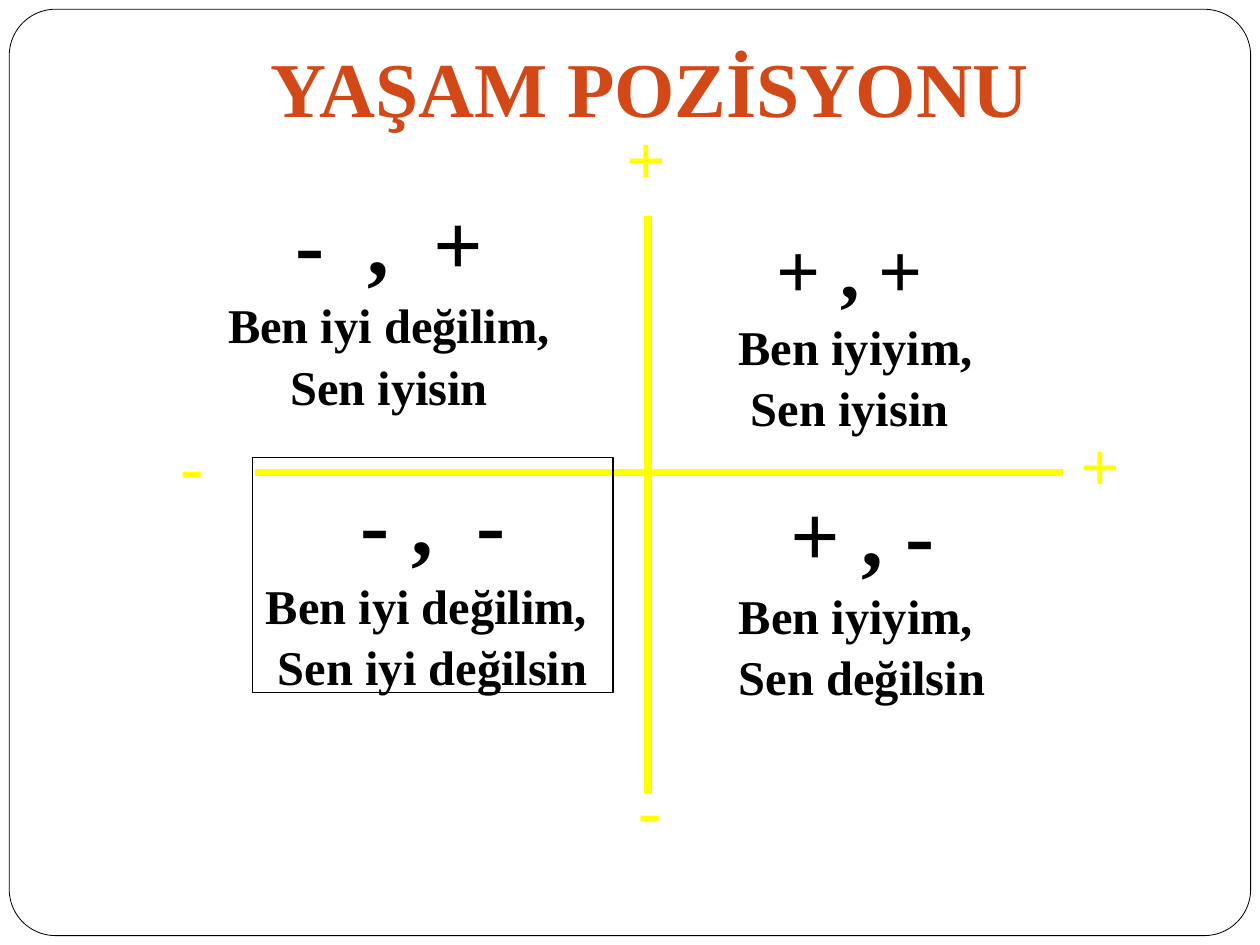
from pptx import Presentation
from pptx.dml.color import RGBColor
from pptx.enum.shapes import MSO_CONNECTOR, MSO_SHAPE
from pptx.enum.text import MSO_ANCHOR, PP_ALIGN
from pptx.oxml.ns import qn
from pptx.util import Inches, Pt
from lxml.etree import SubElement

# Content: every place is (left, top, width, height) in percent of the slide
WIDTH, HEIGHT = 10.83, 8.12
MARGIN = 0.08
FONT = "Times New Roman"
BLACK, WHITE, ORANGE, YELLOW = "000000", "FFFFFF", "D34817", "FFFF00"

TITLE = ("YAŞAM POZİSYONU", (20.41, 3.08, 62.33, 11.08))

QUADRANTS = [  # place, sign size, outlined, lines
    ((16.62, 18.72, 28.53, 24.75), 54, False,
     ["-  ,  +", "Ben iyi değilim, ", "Sen iyisin"]),
    ((55.86, 22.29, 23.18, 23.52), 48, False,
     ["+ , +", " Ben iyiyim,", "Sen iyisin"]),
    ((20.04, 48.4, 28.62, 24.88), 54, True,
     ["- ,  -", "Ben iyi değilim, ", "Sen iyi değilsin"]),
    ((57.62, 49.51, 21.61, 24.75), 54, False,
     ["+ , -", "Ben iyiyim, ", "Sen değilsin"]),
]

CENTRE_X, CENTRE_Y = 51.43, 50
AXES = [  # from x, from y, to x, to y
    (CENTRE_X, 22.91, CENTRE_X, 83.99),
    (20.22, CENTRE_Y, 84.4, CENTRE_Y),
]
AXIS_SIGNS = [
    ("+", (48.75, 11.08, 5.17, 10.15)),
    ("+", (84.76, 43.6, 5.17, 10.15)),
    ("-", (13.3, 43.6, 3.8, 10.15)),
    ("-", (49.68, 80.05, 3.8, 10.15)),
]

presentation = Presentation()
presentation.slide_width, presentation.slide_height = Inches(WIDTH), Inches(HEIGHT)
slide = presentation.slides.add_slide(presentation.slide_layouts[6])


def color(value):
    return RGBColor.from_string(value)


def to_lengths(shares):
    """Turn alternating x and y percentages into lengths."""
    return [Inches(share / 100 * (HEIGHT if index % 2 else WIDTH))
            for index, share in enumerate(shares)]


def add_text(lines, place, sizes, fill=BLACK, align=PP_ALIGN.CENTER, outlined=False):
    if outlined:
        shape = slide.shapes.add_shape(MSO_SHAPE.RECTANGLE, *to_lengths(place))
        shape.shadow.inherit = False
        shape.fill.background()
        shape.line.color.rgb = color(BLACK)
        shape.line.width = Pt(1)
    else:
        shape = slide.shapes.add_textbox(*to_lengths(place))
    frame = shape.text_frame
    frame.word_wrap = False
    frame.vertical_anchor = MSO_ANCHOR.TOP
    frame.margin_left = frame.margin_right = Inches(0.11)
    frame.margin_top = frame.margin_bottom = Inches(0.05)
    for index, (line, size) in enumerate(zip(lines, sizes)):
        paragraph = frame.add_paragraph() if index else frame.paragraphs[0]
        paragraph.alignment = align
        paragraph.line_spacing = 1.05
        run = paragraph.add_run()
        run.text = line
        run.font.name, run.font.size, run.font.bold = FONT, Pt(size), True
        run.font.color.rgb = color(fill)


# Rounded frame around the slide
border = slide.shapes.add_shape(
    MSO_SHAPE.ROUNDED_RECTANGLE, Inches(MARGIN), Inches(MARGIN),
    Inches(WIDTH - 2 * MARGIN), Inches(HEIGHT - 2 * MARGIN))
border.adjustments[0] = 0.05
border.shadow.inherit = False
border.fill.solid()
border.fill.fore_color.rgb = color(WHITE)
border.line.color.rgb = color(BLACK)
border.line.width = Pt(0.5)

# Title
title, title_place = TITLE
add_text([title], title_place, [48], fill=ORANGE)

# Axes
for axis in AXES:
    connector = slide.shapes.add_connector(MSO_CONNECTOR.STRAIGHT, *to_lengths(axis))
    connector.line.color.rgb = color(YELLOW)
    connector.line.width = Pt(4.5)
    SubElement(connector._element.spPr, qn("a:effectLst"))

# Quadrants
for place, sign_size, outlined, lines in QUADRANTS:
    add_text(lines, place, [sign_size, 30, 30], outlined=outlined)

# Signs at the ends of the axes
for sign, place in AXIS_SIGNS:
    add_text([sign], place, [43], fill=YELLOW, align=PP_ALIGN.LEFT)

presentation.save("out.pptx")
